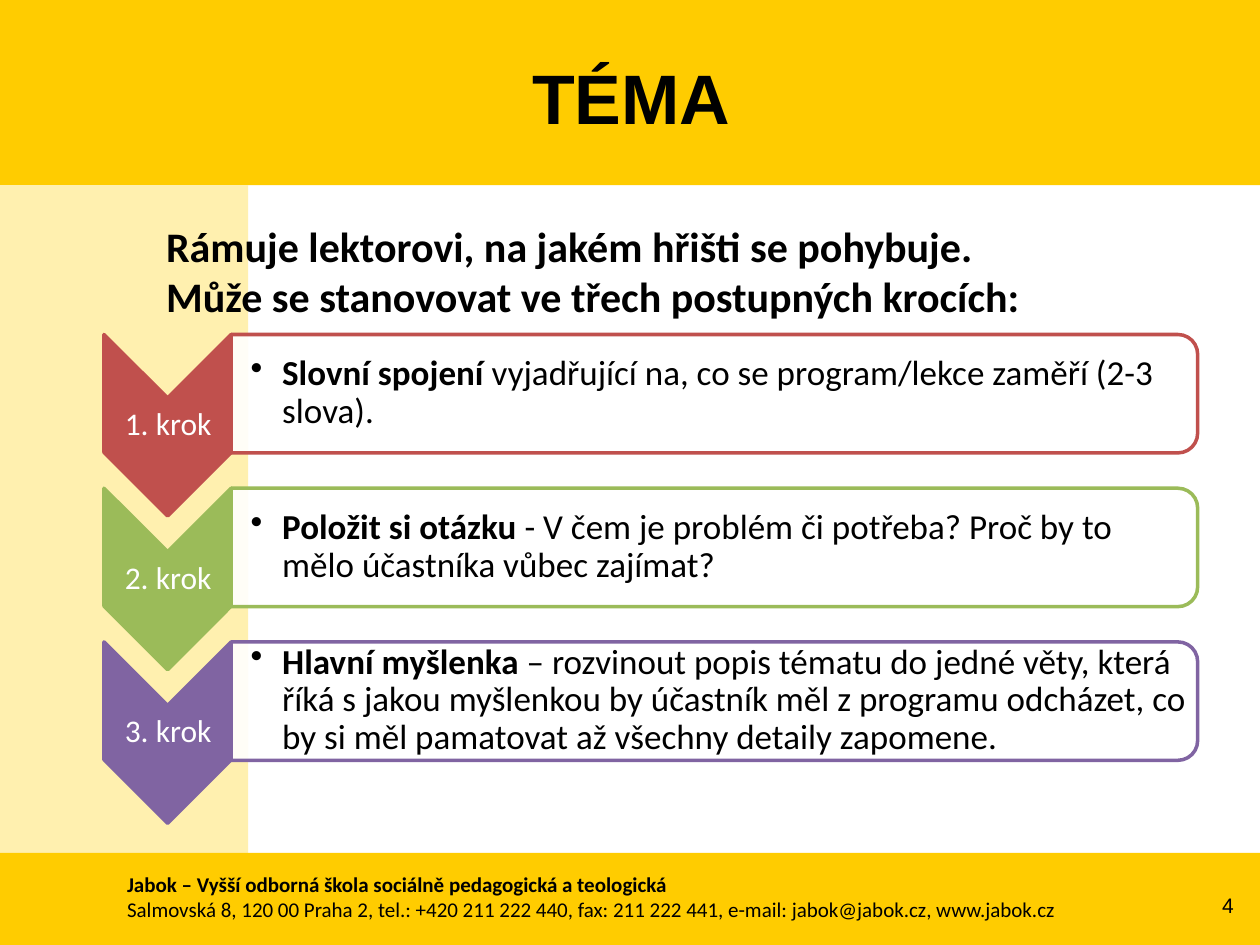
from dataclasses import dataclass

from lxml import etree
from pptx import Presentation
from pptx.dml.color import RGBColor
from pptx.enum.shapes import MSO_SHAPE
from pptx.enum.text import MSO_ANCHOR, PP_ALIGN
from pptx.oxml.ns import qn
from pptx.util import Inches, Pt

RECT, CHEVRON, ROUND = MSO_SHAPE.RECTANGLE, MSO_SHAPE.CHEVRON, MSO_SHAPE.ROUND_2_SAME_RECTANGLE
TOP, MIDDLE = MSO_ANCHOR.TOP, MSO_ANCHOR.MIDDLE
LEFT, CENTER, RIGHT = PP_ALIGN.LEFT, PP_ALIGN.CENTER, PP_ALIGN.RIGHT


@dataclass(frozen=True)
class Theme:
    gold: str = "FFCC00"
    cream: str = "FFF0AF"
    white: str = "FFFFFF"
    black: str = "000000"
    steps: tuple = ("C0504D", "9BBB59", "8064A2")
    head: str = "Arial"
    body: str = "Calibri"
    title: int = 40
    intro: int = 24
    point: int = 20
    label: int = 18
    small: int = 12


theme = Theme()
prs = Presentation()
prs.slide_width, prs.slide_height = Inches(10), Inches(7.5)
slide = prs.slides.add_slide(prs.slide_layouts[6])


def add_shape(kind, box, fill, line=None):
    shape = slide.shapes.add_shape(kind, *map(Inches, box))
    shape.shadow.inherit = False
    shape.fill.solid()
    shape.fill.fore_color.rgb = RGBColor.from_string(fill)
    if line:
        shape.line.color.rgb = RGBColor.from_string(line)
        shape.line.width = Pt(2)
        shape.rotation = 90
    else:
        shape.line.fill.background()
    return shape


def add_text(box, paras, size, font=theme.body, color=theme.black,
             align=LEFT, anchor=TOP, insets=None, bullet=False):
    """Each paragraph is a list of (text, bold) runs."""
    frame = slide.shapes.add_textbox(*map(Inches, box)).text_frame
    frame.word_wrap = True
    frame.vertical_anchor = anchor
    if insets:
        (frame.margin_left, frame.margin_top,
         frame.margin_right, frame.margin_bottom) = map(Inches, insets)
    for i, runs in enumerate(paras):
        para = frame.add_paragraph() if i else frame.paragraphs[0]
        para.alignment = align
        if insets:
            para.line_spacing = 0.9
        if bullet:
            props = para._p.get_or_add_pPr()
            props.set("marL", str(Inches(0.25)))
            props.set("indent", str(-Inches(0.25)))
            etree.SubElement(props, qn("a:buChar")).set("char", "•")
        for text, bold in runs:
            run = para.add_run()
            run.text = text
            run.font.name, run.font.size, run.font.bold = font, Pt(size), bold
            run.font.color.rgb = RGBColor.from_string(color)


# Background bands
add_shape(RECT, (0, 0, 10, 1.47), theme.gold)
add_shape(RECT, (0, 1.47, 1.97, 6.03), theme.cream)
add_shape(RECT, (0, 6.77, 10, 0.73), theme.gold)

# Footer and page number
add_text((0.91, 6.87, 8.19, 0.5), [
    [("Jabok – Vyšší odborná škola sociálně pedagogická a teologická", True)],
    [("Salmovská 8, 120 00 Praha 2, tel.: +420 211 222 440, fax: 211 222 441, "
      "e-mail: jabok@jabok.cz, www.jabok.cz", False)],
], theme.small)
add_text((9.26, 6.98, 0.63, 0.4), [[("4", False)]], theme.small,
         theme.head, align=RIGHT, anchor=MIDDLE)

# Title
add_text((0.51, 0.14, 9, 1.25), [[("TÉMA", True)]], theme.title,
         theme.head, align=CENTER, anchor=MIDDLE)

# Three steps: chevron, label, frame and point in each row
points = [
    ("Slovní spojení ", "vyjadřující na, co se program/lekce zaměří (2-3 slova)."),
    ("Položit si otázku ",
     "- V čem je problém či potřeba? Proč by to mělo účastníka vůbec zajímat?"),
    ("Hlavní myšlenka ",
     "– rozvinout popis tématu do jedné věty, která říká s jakou myšlenkou by účastník "
     "měl z programu odcházet, co by si měl pamatovat až všechny detaily zapomene."),
]
for i, (color, (lead, rest)) in enumerate(zip(theme.steps, points)):
    y = 2.65 + 1.22 * i
    add_shape(CHEVRON, (0.61, y + 0.22, 1.44, 1.01), color, color)
    add_text((0.83, y + 0.51, 1.01, 0.43), [[(f"{i + 1}. krok", False)]], theme.label,
             color=theme.white, align=CENTER, anchor=MIDDLE, insets=(0.01,) * 4)
    panel = add_shape(ROUND, (5.2, y - 3.36, 0.94, 7.67), theme.white, color)
    tint = panel.fill._xPr.find(qn("a:solidFill"))[0]
    etree.SubElement(tint, qn("a:alpha")).set("val", "90000")
    add_text((1.83, y + 0.05, 7.62, 0.84), [[(lead, True), (rest, False)]], theme.point,
             anchor=MIDDLE, insets=(0.16, 0.01, 0.01, 0.01), bullet=True)

# Introduction
add_text((1.22, 1.7, 7.72, 1.21), [
    [("Rámuje lektorovi, na jakém hřišti se pohybuje.", True)],
    [("Může se stanovovat ve třech postupných krocích:", True)],
], theme.intro)

prs.save("out.pptx")
